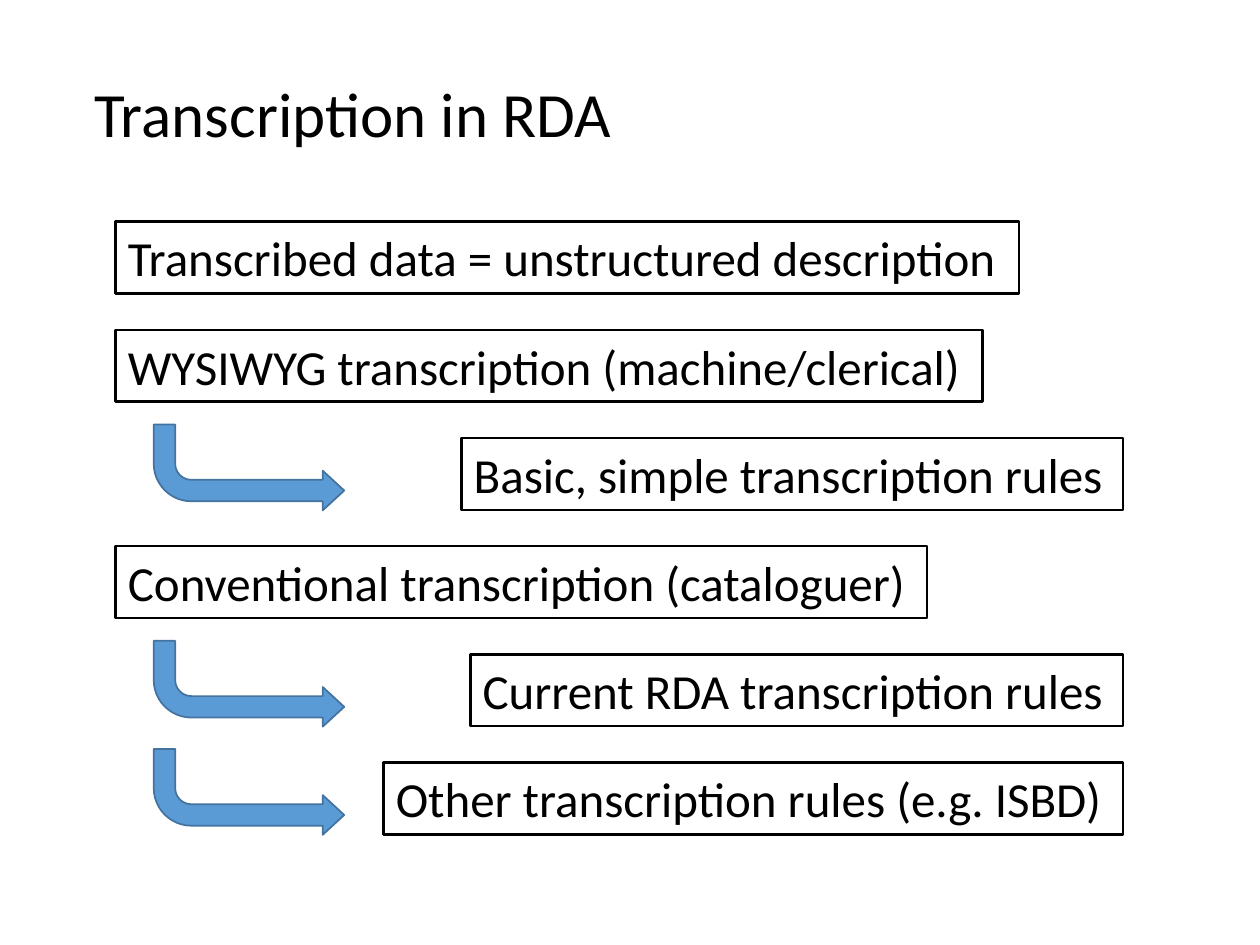
"""Build the slide on transcription in RDA."""
from pptx import Presentation
from pptx.dml.color import RGBColor
from pptx.enum.shapes import MSO_SHAPE as Preset
from pptx.util import Cm, Pt

BLACK = RGBColor(0x00, 0x00, 0x00)
BLUE = RGBColor(0x5B, 0x9B, 0xD5)
DARK_BLUE = RGBColor(0x43, 0x73, 0x9E)

FIRST_TOP, ROW_PITCH, ROW_HEIGHT = 4.47, 2.18, 1.45
LEFT_EDGE, RIGHT_EDGE = 2.33, 22.64
ROWS = [
    ("Transcribed data = unstructured description", 18.21, False),
    ("WYSIWYG transcription (machine/clerical)", 17.48, False),
    ("Basic, simple transcription rules", 13.34, True),
    ("Conventional transcription (cataloguer)", 16.36, False),
    ("Current RDA transcription rules", 13.16, True),
    ("Other transcription rules (e.g. ISBD)", 14.91, True),
]


class SlideBuilder:
    font = "Calibri"
    bend = (0.25, 0.231, 0.25, 0.438)

    def __init__(self, page):
        self.page = page

    def text(self, words, left, top, width, height, size):
        box = self.page.shapes.add_textbox(Cm(left), Cm(top), Cm(width), Cm(height))
        box.text_frame.word_wrap = True
        span = box.text_frame.paragraphs[0].add_run()
        span.text = words
        span.font.name = self.font
        span.font.size = Pt(size)
        span.font.color.rgb = BLACK
        return box

    def framed_text(self, words, left, top, width):
        box = self.text(words, left, top, width, ROW_HEIGHT, 28)
        box.line.color.rgb = BLACK
        box.line.width = Pt(1.5)

    def bent_arrow(self, top):
        arrow = self.page.shapes.add_shape(
            Preset.BENT_ARROW, Cm(3.1), Cm(top), Cm(3.84), Cm(1.73))
        arrow.shadow.inherit = False
        arrow.element.spPr.xfrm.set("flipV", "1")
        for index, value in enumerate(self.bend):
            arrow.adjustments[index] = value
        arrow.fill.solid()
        arrow.fill.fore_color.rgb = BLUE
        arrow.line.color.rgb = DARK_BLUE
        arrow.line.width = Pt(1)


def main():
    deck = Presentation()
    deck.slide_width, deck.slide_height = Cm(25.4), Cm(19.05)
    builder = SlideBuilder(deck.slides.add_slide(deck.slide_layouts[6]))
    builder.text("Transcription in RDA", 1.65, 1.37, 11.05, 1.8, 36)
    for index, (words, width, is_rule) in enumerate(ROWS):
        top = FIRST_TOP + index * ROW_PITCH
        left = RIGHT_EDGE - width if is_rule else LEFT_EDGE
        builder.framed_text(words, left, top, width)
        if is_rule:
            builder.bent_arrow(top - 0.27)
    deck.save("out.pptx")


if __name__ == "__main__":
    main()
